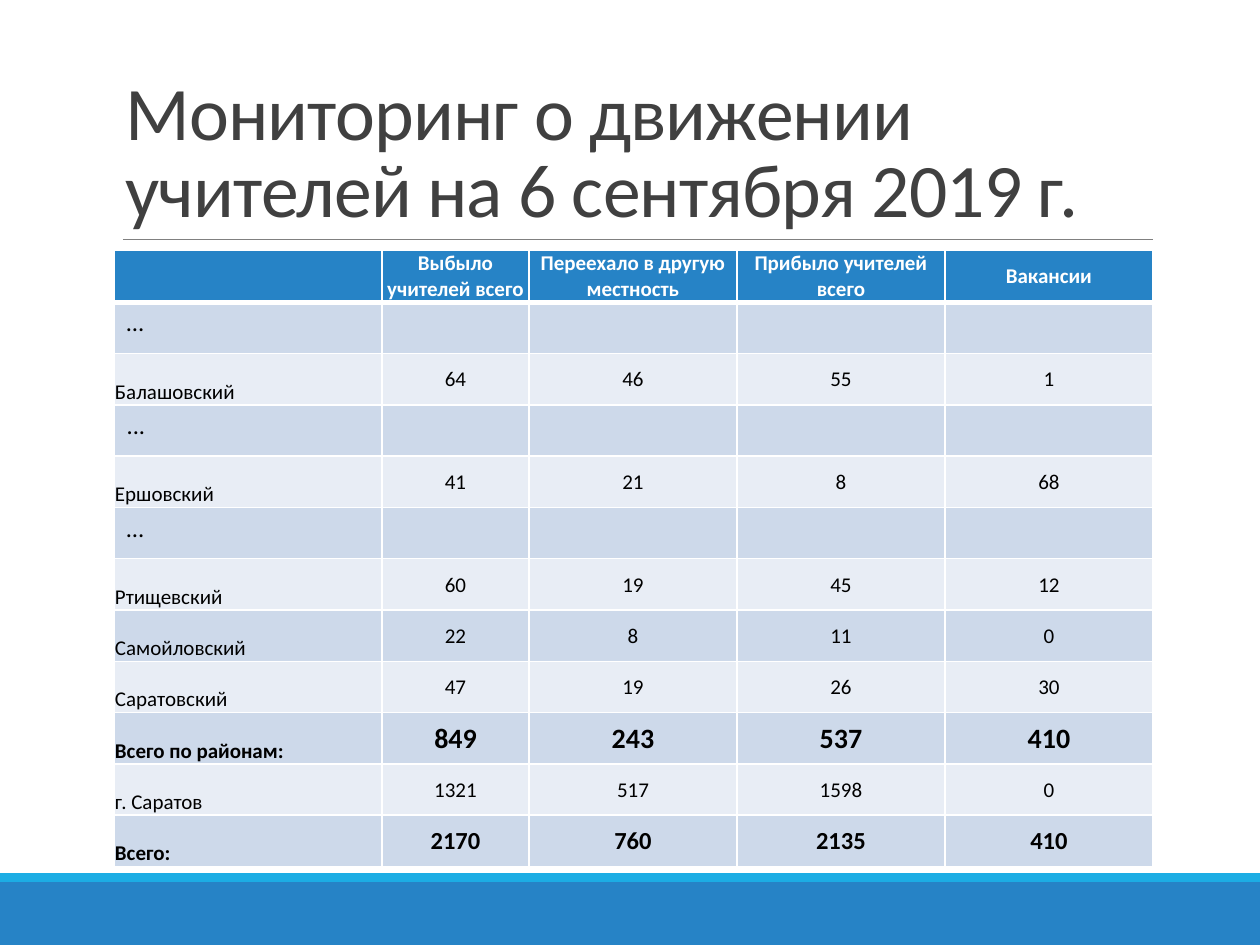
from lxml import etree
from pptx import Presentation
from pptx.dml.color import RGBColor
from pptx.enum.shapes import MSO_CONNECTOR, MSO_SHAPE
from pptx.enum.text import MSO_ANCHOR, MSO_AUTO_SIZE, PP_ALIGN
from pptx.oxml.ns import qn
from pptx.util import Emu, Pt

LEFT, CENTER = PP_ALIGN.LEFT, PP_ALIGN.CENTER
TOP, MIDDLE, BOTTOM = MSO_ANCHOR.TOP, MSO_ANCHOR.MIDDLE, MSO_ANCHOR.BOTTOM

# Content
TITLE = "Мониторинг о движении учителей на 6 сентября 2019 г."
HEADERS = ["", "Выбыло учителей всего", "Переехало в другую местность",
           "Прибыло учителей всего", "Вакансии"]
ROWS = [
    ("…",),
    ("Балашовский", 64, 46, 55, 1),
    ("...",),
    ("Ершовский", 41, 21, 8, 68),
    ("…",),
    ("Ртищевский", 60, 19, 45, 12),
    ("Самойловский", 22, 8, 11, 0),
    ("Саратовский", 47, 19, 26, 30),
    ("Всего по районам:", 849, 243, 537, 410),
    ("г. Саратов", 1321, 517, 1598, 0),
    ("Всего:", 2170, 760, 2135, 410),
]
TOTAL_SIZES = {"Всего по районам:": 16, "Всего:": 14}

# Layout in px
SCALE = 914400 / 126
TITLE_BOX = (113, 39, 1040, 200)
TABLE_LEFT, TABLE_TOP, TABLE_HEIGHT = 114, 250, 616
COLUMN_WIDTHS = [268, 147, 208, 208, 208]
FOOTER_BARS = [((0, 882, 1260, 63), "blue"), ((0, 873, 1260, 9), "cyan")]
RULE = (123, 239, 1153, 239)

FONT = "Calibri"
COLORS = {"blue": "2683C6", "cyan": "1CADE4", "rule": "808080", "title": "404040",
          "white": "FFFFFF", "black": "000000", "dark_band": "CDD9EA",
          "light_band": "E8EDF5"}


def px(value):
    return Emu(round(value * SCALE))


def color(name):
    return RGBColor.from_string(COLORS[name])


def write_text(frame, text, *, size=12, bold=False, ink="black", align=LEFT,
               line_spacing=None, tracking=None):
    paragraph = frame.paragraphs[0]
    paragraph.alignment = align
    if line_spacing:
        paragraph.line_spacing = line_spacing
    run = paragraph.add_run()
    run.text = text
    run.font.name, run.font.size, run.font.bold = FONT, Pt(size), bold
    run.font.color.rgb = color(ink)
    if tracking:
        run.font._element.set("spc", str(round(tracking * 100)))


def set_borders(cell, widths):
    """Add white cell borders ahead of the fill, as the schema orders them."""
    properties = cell._tc.get_or_add_tcPr()
    for index, (side, width) in enumerate(widths.items()):
        line = etree.Element(qn(f"a:ln{side}"), w=str(Pt(width)))
        fill = etree.SubElement(line, qn("a:solidFill"))
        etree.SubElement(fill, qn("a:srgbClr"), val=COLORS["white"])
        properties.insert(index, line)


def format_cell(cell, fill, anchor, tight, top=1, bottom=1):
    cell.fill.solid()
    cell.fill.fore_color.rgb = color(fill)
    cell.vertical_anchor = anchor
    if tight:
        cell.margin_left = cell.margin_right = cell.margin_top = px(1)
        cell.margin_bottom = 0
    set_borders(cell, {"L": 1, "R": 1, "T": top, "B": bottom})


def add_decoration(slide):
    for box, fill in FOOTER_BARS:
        bar = slide.shapes.add_shape(MSO_SHAPE.RECTANGLE, *map(px, box))
        bar.shadow.inherit = False
        bar.fill.solid()
        bar.fill.fore_color.rgb = color(fill)
        bar.line.fill.background()
    rule = slide.shapes.add_connector(MSO_CONNECTOR.STRAIGHT, *map(px, RULE))
    rule.line.color.rgb = color("rule")
    rule.line.width = Pt(0.5)
    etree.SubElement(rule._element.spPr, qn("a:effectLst"))


def add_title(slide):
    title = slide.shapes.title
    title.left, title.top, title.width, title.height = map(px, TITLE_BOX)
    frame = title.text_frame
    frame.word_wrap = True
    frame.auto_size = MSO_AUTO_SIZE.NONE
    frame.vertical_anchor = BOTTOM
    write_text(frame, TITLE, size=43.2, ink="title", line_spacing=0.85, tracking=-0.5)


def add_teacher_table(slide):
    row_count = len(ROWS) + 1
    table = slide.shapes.add_table(
        row_count, len(HEADERS), px(TABLE_LEFT), px(TABLE_TOP),
        px(sum(COLUMN_WIDTHS)), px(TABLE_HEIGHT)).table
    for column, width in zip(table.columns, COLUMN_WIDTHS):
        column.width = px(width)
    for row in table.rows:
        row.height = px(TABLE_HEIGHT / row_count)

    # Header row
    for index, header in enumerate(HEADERS):
        cell = table.cell(0, index)
        format_cell(cell, "blue", MIDDLE, tight=bool(header), bottom=3)
        if header:
            write_text(cell.text_frame, header, bold=True, ink="white", align=CENTER)

    # Districts, gaps and totals
    for row_index, (name, *values) in enumerate(ROWS, start=1):
        fill = "dark_band" if row_index % 2 else "light_band"
        top = 3 if row_index == 1 else 1
        is_total = name in TOTAL_SIZES
        cells = [table.cell(row_index, index) for index in range(len(HEADERS))]
        for cell in cells:
            anchor = TOP if not values else BOTTOM if cell is cells[0] else MIDDLE
            format_cell(cell, fill, anchor, tight=bool(values), top=top)
        write_text(cells[0].text_frame, name, size=12 if values else 14, bold=is_total)
        for cell, value in zip(cells[1:], values):
            write_text(cell.text_frame, str(value), size=TOTAL_SIZES.get(name, 12),
                       bold=is_total, align=CENTER)


def main():
    presentation = Presentation()
    presentation.slide_width, presentation.slide_height = px(1260), px(945)
    slide = presentation.slides.add_slide(presentation.slide_layouts[5])
    add_decoration(slide)
    add_title(slide)
    add_teacher_table(slide)
    presentation.save("out.pptx")


if __name__ == "__main__":
    main()
